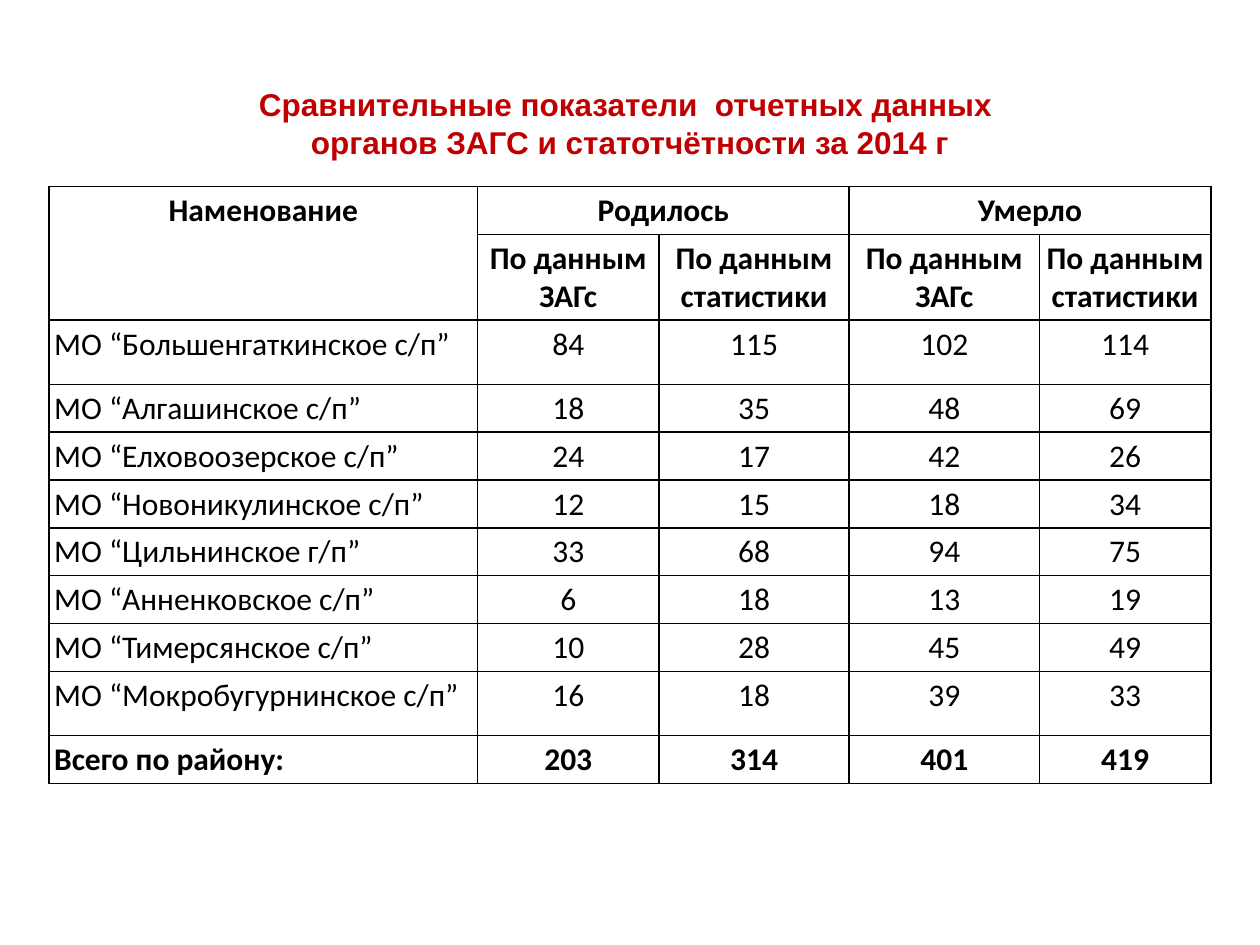
from lxml import etree
from pptx import Presentation
from pptx import util as u
from pptx.dml.color import RGBColor
from pptx.enum import text
from pptx.oxml import ns

RED = RGBColor(0xC0, 0x00, 0x00)
BLACK = RGBColor(0x00, 0x00, 0x00)

WIDTHS = [3.4, 1.44, 1.51, 1.51, 1.36]
SHORT, TALL = 0.29, 0.51
TALL_ROWS = {1, 2, 9}
ROWS = [
    ["Наменование", "Родилось", "", "Умерло", ""],
    [""] + ["По данным ЗАГс", "По данным статистики"] * 2,
    ["МО “Большенгаткинское с/п”", 84, 115, 102, 114],
    ["МО “Алгашинское с/п”", 18, 35, 48, 69],
    ["МО “Елховоозерское с/п”", 24, 17, 42, 26],
    ["МО “Новоникулинское с/п”", 12, 15, 18, 34],
    ["МО “Цильнинское г/п”", 33, 68, 94, 75],
    ["МО “Анненковское с/п”", 6, 18, 13, 19],
    ["МО “Тимерсянское с/п”", 10, 28, 45, 49],
    ["МО “Мокробугурнинское с/п”", 16, 18, 39, 33],
    ["Всего по району:", 203, 314, 401, 419],
]
HEADS = 2
MERGES = [((0, 0), (1, 0)), ((0, 1), (0, 2)), ((0, 3), (0, 4))]


class Deck:
    """Holds the text style and the current slide."""

    def __init__(self):
        self.prs = Presentation()
        self.prs.slide_width = u.Inches(10)
        self.prs.slide_height = u.Inches(7.5)
        self.slide = self.prs.slides.add_slide(self.prs.slide_layouts[5])
        self.size = u.Pt(18)

    def style(self, para, face, color, bold, align):
        para.alignment = align
        font = para.font
        font.name, font.size, font.bold = face, self.size, bold
        font.color.rgb = color

    def title(self, words, left, top, width, height):
        box = self.slide.shapes.title
        box.left, box.top = u.Inches(left), u.Inches(top)
        box.width, box.height = u.Inches(width), u.Inches(height)
        frame = box.text_frame
        frame.text = words
        frame.word_wrap = True
        frame.auto_size = text.MSO_AUTO_SIZE.SHAPE_TO_FIT_TEXT
        frame.vertical_anchor = text.MSO_ANCHOR.MIDDLE
        for para in frame.paragraphs:
            self.style(para, "Arial", RED, True, text.PP_ALIGN.CENTER)

    def border(self, cell):
        props = cell._tc.get_or_add_tcPr()
        for spot, side in enumerate(("lnL", "lnR", "lnT", "lnB")):
            line = etree.Element(ns.qn(f"a:{side}"), w=str(u.Pt(1)))
            fill = etree.SubElement(line, ns.qn("a:solidFill"))
            etree.SubElement(fill, ns.qn("a:srgbClr"), val=str(BLACK))
            props.insert(spot, line)

    def cell(self, cell, value, bold, align):
        cell.text = str(value)
        cell.fill.background()
        cell.margin_left = cell.margin_right = u.Inches(0.04)
        cell.margin_top = cell.margin_bottom = u.Inches(0.04)
        self.style(cell.text_frame.paragraphs[0], "Calibri", BLACK, bold, align)
        self.border(cell)

    def table(self, rows, left, top):
        heights = [TALL if i in TALL_ROWS else SHORT for i in range(len(rows))]
        grid = self.slide.shapes.add_table(
            len(rows), len(WIDTHS), u.Inches(left), u.Inches(top),
            u.Inches(sum(WIDTHS)), u.Inches(sum(heights))).table
        grid.first_row = grid.horz_banding = False
        for col, width in zip(grid.columns, WIDTHS):
            col.width = u.Inches(width)
        for i, row in enumerate(rows):
            grid.rows[i].height = u.Inches(heights[i])
            bold = i < HEADS or i == len(rows) - 1
            for j, value in enumerate(row):
                name = j == 0 and i >= HEADS
                align = text.PP_ALIGN.LEFT if name else text.PP_ALIGN.CENTER
                self.cell(grid.cell(i, j), value, bold, align)
        for start, end in MERGES:
            grid.cell(*start).merge(grid.cell(*end))


def main():
    deck = Deck()
    deck.title("Сравнительные показатели  отчетных данных \n"
               "органов ЗАГС и статотчётности за 2014 г",
               0.31, 0.62, 9.38, 0.71)
    deck.table(ROWS, 0.39, 1.48)
    deck.prs.save("out.pptx")


if __name__ == "__main__":
    main()
